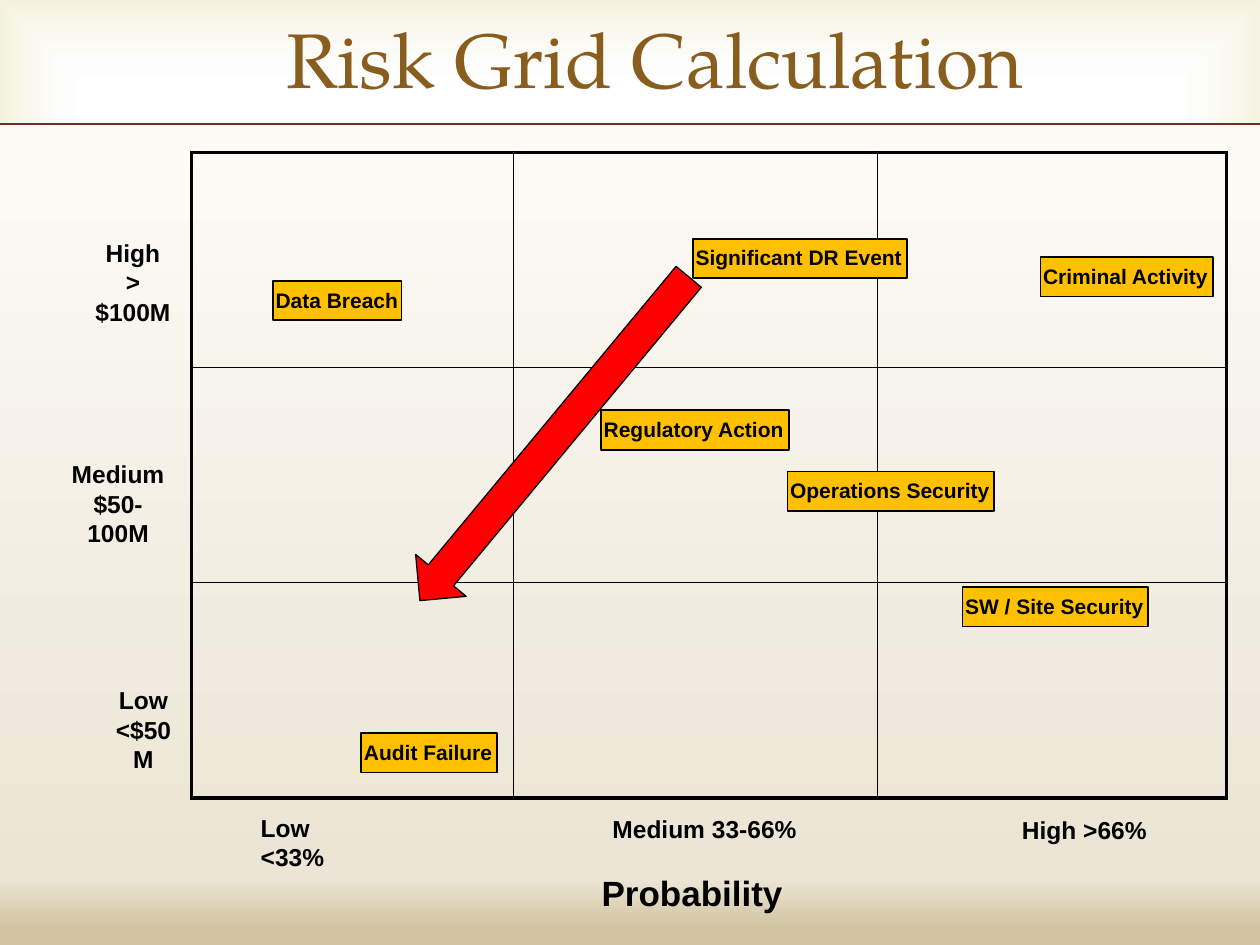
"""Build the risk grid slide: impact against probability, with seven risks placed on it."""
from lxml import etree
from pptx import Presentation
from pptx.dml.color import RGBColor as RGB
from pptx.enum.shapes import MSO_CONNECTOR as CONNECTOR, MSO_SHAPE as SHAPE
from pptx.enum.text import MSO_ANCHOR as ANCHOR, MSO_AUTO_SIZE as AUTO, PP_ALIGN as ALIGN
from pptx.oxml import parse_xml
from pptx.oxml.ns import nsdecls, qn
from pptx.util import Pt

COLORS = {
    "text": "000000", "title": "895D1D", "rule": "742E1F", "risk": "FFC000", "arrow": "FF0000",
    "white": "FFFFFF", "glow": "D1CA75", "cream": "FCFBF6", "sand": "ECE5D5", "tan": "D1C39F",
}


def write(shape, text, size=14, font="Arial", color="text", bold=True,
          align=ALIGN.LEFT, anchor=ANCHOR.TOP, margins=(1.5, 3.6), wrap=False, fit=True):
    frame = shape.text_frame
    frame.text = text
    frame.word_wrap = wrap
    frame.auto_size = AUTO.SHAPE_TO_FIT_TEXT if fit else AUTO.NONE
    frame.vertical_anchor = anchor
    frame.margin_left = frame.margin_right = Pt(margins[0])
    frame.margin_top = frame.margin_bottom = Pt(margins[1])
    for paragraph in frame.paragraphs:
        paragraph.alignment = align
        paragraph.font.size = Pt(size)
        paragraph.font.name = font
        paragraph.font.bold = bold
        paragraph.font.color.rgb = RGB.from_string(COLORS[color])


def add_gradient(top, height, stops, direction):
    band = slide.shapes.add_shape(SHAPE.RECTANGLE, 0, Pt(top), Pt(720), Pt(height))
    band.shadow.inherit = False
    band.line.fill.background()
    stop_xml = "".join(
        f'<a:gs pos="{position * 1000}"><a:srgbClr val="{COLORS[color]}">'
        f'<a:alpha val="{alpha * 1000}"/></a:srgbClr></a:gs>'
        for position, color, alpha in stops)
    gradient = parse_xml(
        f'<a:gradFill {nsdecls("a")} rotWithShape="1"><a:gsLst>{stop_xml}</a:gsLst>{direction}</a:gradFill>')
    band.element.spPr.find(qn("a:prstGeom")).addnext(gradient)


deck = Presentation()
deck.slide_width, deck.slide_height = Pt(720), Pt(540)
slide = deck.slides.add_slide(deck.slide_layouts[5])

add_gradient(0, 540, [(83, "white", 11), (100, "glow", 23)],
             '<a:path path="rect"><a:fillToRect l="50000" t="50000" r="50000" b="50000"/></a:path>')
add_gradient(71, 469, [(0, "cream", 100), (92, "sand", 100), (98, "tan", 100)],
             '<a:lin ang="5400000" scaled="0"/>')

title_rule = slide.shapes.add_connector(CONNECTOR.STRAIGHT, 0, Pt(71), Pt(720), Pt(71))
title_rule.line.color.rgb = RGB.from_string(COLORS["rule"])
title_rule.line.width = Pt(1)
etree.SubElement(title_rule.element.spPr, qn("a:effectLst"))

title = slide.shapes.title
title.left, title.top, title.width, title.height = Pt(54.5), Pt(4.5), Pt(639.5), Pt(57)
write(title, "Risk Grid Calculation", size=44, font="TeX Gyre Pagella", color="title", bold=False,
      align=ALIGN.CENTER, anchor=ANCHOR.MIDDLE, margins=(7.2, 3.6), wrap=True, fit=False)
title.element.getparent().append(title.element)

column_widths = [184, 208, 199.5]
row_height = 123
grid = slide.shapes.add_table(3, 3, Pt(109.5), Pt(87), Pt(sum(column_widths)), Pt(3 * row_height)).table
grid.first_row = grid.horz_banding = False
for column, width in zip(grid.columns, column_widths):
    column.width = Pt(width)
for r, row in enumerate(grid.rows):
    row.height = Pt(row_height)
    for c, cell in enumerate(row.cells):
        cell.fill.background()
        outer_sides = {"L": c == 0, "R": c == 2, "T": r == 0, "B": r == 2}
        for index, (side, is_outer) in enumerate(outer_sides.items()):
            border = parse_xml(
                f'<a:ln{side} {nsdecls("a")} w="{Pt(2.25 if is_outer else 1)}"><a:solidFill>'
                f'<a:srgbClr val="{COLORS["text"]}"/></a:solidFill></a:ln{side}>')
            cell._tc.get_or_add_tcPr().insert(index, border)

axis_labels = [
    ("High\n> $100M", 47, 132.5, 58, 41, ALIGN.CENTER),
    ("Medium\n$50-100M", 34.5, 259, 66, 41, ALIGN.CENTER),
    ("Low\n<$50M", 59, 388, 46, 41, ALIGN.CENTER),
    ("Low <33%", 147.5, 461, 71, 24.5, ALIGN.LEFT),
    ("Medium 33-66%", 348.5, 461.5, 108.5, 24.5, ALIGN.LEFT),
    ("High >66%", 582.5, 462, 75, 24.5, ALIGN.LEFT),
]
for text, left, top, width, height, align in axis_labels:
    label = slide.shapes.add_textbox(Pt(left), Pt(top), Pt(width), Pt(height))
    write(label, text, align=align)

probability = slide.shapes.add_textbox(Pt(68.5), Pt(494.5), Pt(654), Pt(31.5))
write(probability, "Probability", size=20, align=ALIGN.CENTER, wrap=True)

risks = [
    ("Regulatory Action", 343.5, 234.5, 107.5),
    ("Significant DR Event", 396, 136.5, 122.5),
    ("SW / Site Security", 550, 335.5, 106),
    ("Criminal Activity", 594.5, 147, 98.5),
    ("Operations Security", 450, 269.5, 118),
    ("Audit Failure", 206.5, 419, 77.5),
    ("Data Breach", 156, 160.5, 73.5),
]
for text, left, top, width in risks:
    risk = slide.shapes.add_shape(SHAPE.RECTANGLE, Pt(left), Pt(top), Pt(width), Pt(22.5))
    risk.shadow.inherit = False
    risk.fill.solid()
    risk.fill.fore_color.rgb = RGB.from_string(COLORS["risk"])
    risk.line.color.rgb = RGB.from_string(COLORS["text"])
    risk.line.width = Pt(1)
    write(risk, text, size=12)

mitigation = slide.shapes.add_shape(SHAPE.DOWN_ARROW, Pt(298), Pt(130.5), Pt(37.5), Pt(240.5))
mitigation.rotation = 39.7
mitigation.shadow.inherit = False
mitigation.fill.solid()
mitigation.fill.fore_color.rgb = RGB.from_string(COLORS["arrow"])
mitigation.line.color.rgb = RGB.from_string(COLORS["text"])
mitigation.line.width = Pt(0.75)

deck.save("out.pptx")
